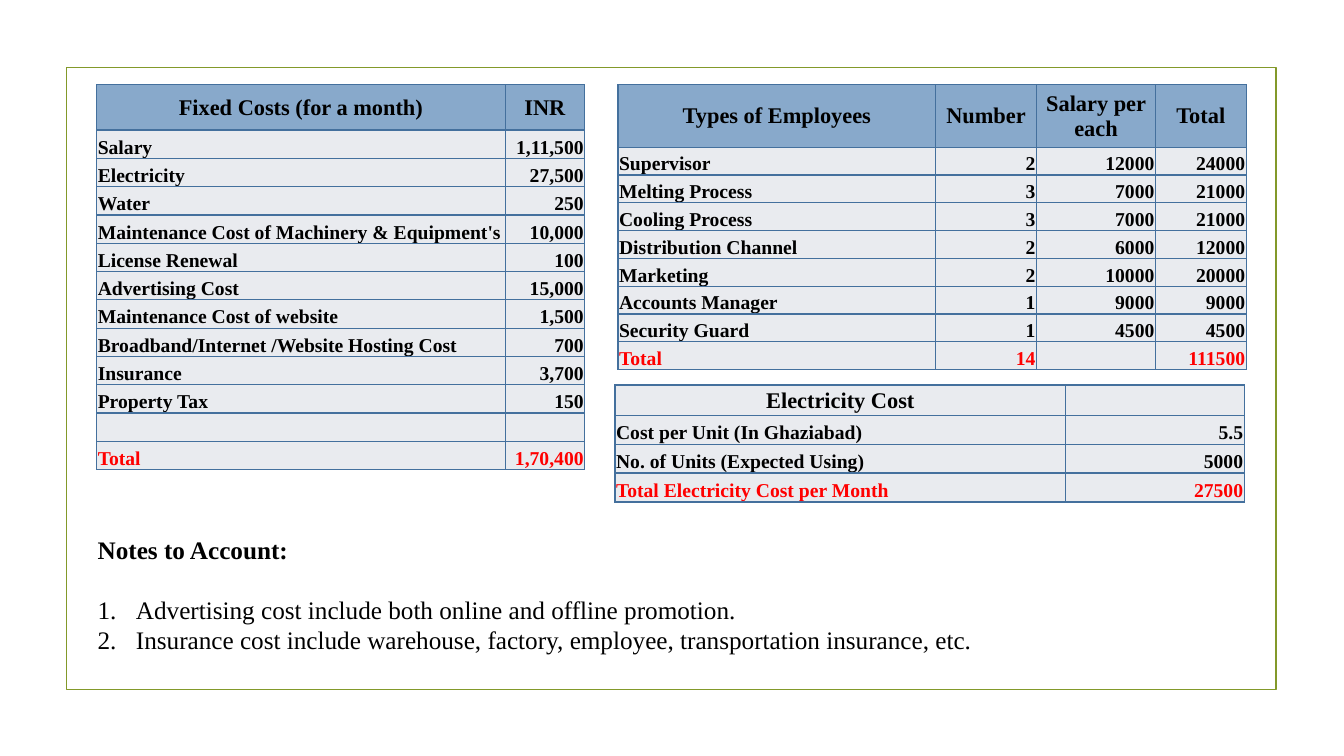
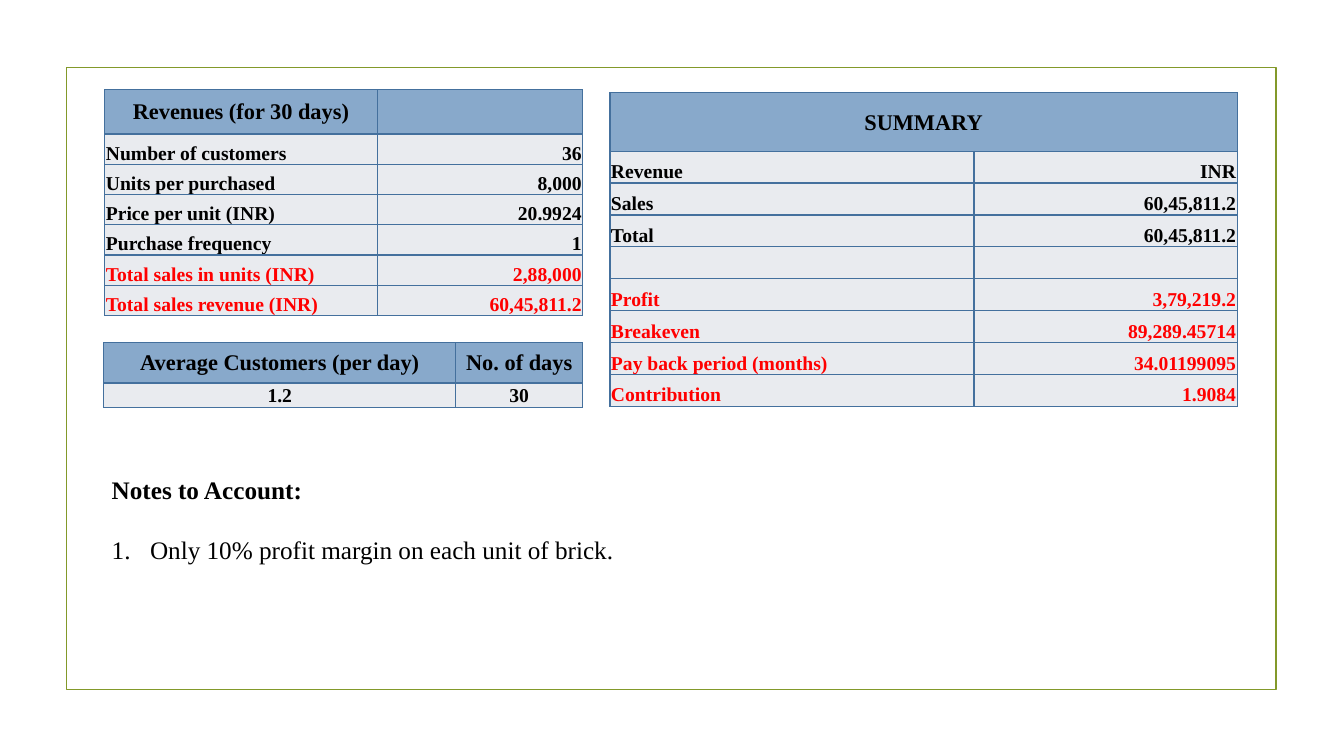
import pptx
import pptx.util
import pptx.dml.color
import pptx.enum.shapes
import pptx.enum.text
import pptx.oxml
import pptx.oxml.ns

Inches = pptx.util.Inches
Pt = pptx.util.Pt
ALIGN = pptx.enum.text.PP_ALIGN
ANCHOR = pptx.enum.text.MSO_ANCHOR

COLORS = {
    "frame": "83992A",
    "border": "44709D",
    "header": "88A9CB",
    "body": "E9EBEF",
    "text": "000000",
    "total": "FF0000",
}


def rgb(name):
    return pptx.dml.color.RGBColor.from_string(COLORS[name])


class Deck:
    font = "Times New Roman"
    header_size, body_size, remark_size = 16, 14, 18

    def __init__(self):
        self.prs = pptx.Presentation()
        self.prs.slide_width = Inches(13.33)
        self.prs.slide_height = Inches(7.5)
        self.slide = None

    def new_slide(self):
        self.slide = self.prs.slides.add_slide(self.prs.slide_layouts[6])
        sp = self.slide.shapes.add_shape(
            pptx.enum.shapes.MSO_SHAPE.RECTANGLE,
            Inches(0.66), Inches(0.67), Inches(12), Inches(6.17))
        sp.shadow.inherit = False
        sp.fill.background()
        sp.line.color.rgb = rgb("frame")
        sp.line.width = Pt(1.25)

    def style(self, p, size, bold=True, color="text"):
        p.font.name = self.font
        p.font.size = Pt(size)
        p.font.bold = bold
        p.font.color.rgb = rgb(color)

    def borders(self, cell):
        tc_pr = cell._tc.get_or_add_tcPr()
        for side in "LRTB":
            tc_pr.append(pptx.oxml.parse_xml(
                f'<a:ln{side} {pptx.oxml.ns.nsdecls("a")} w="12700"><a:solidFill>'
                f'<a:srgbClr val="{COLORS["border"]}"/></a:solidFill></a:ln{side}>'))

    def cell(self, cell, text, size, align, anchor, fill, color):
        self.borders(cell)
        cell.fill.solid()
        cell.fill.fore_color.rgb = rgb(fill)
        cell.margin_left = cell.margin_right = cell.margin_top = Inches(0.01)
        cell.margin_bottom = 0
        cell.vertical_anchor = anchor
        p = cell.text_frame.paragraphs[0]
        p.text = text
        p.alignment = align
        self.style(p, size, color=color)

    def table(self, left, top, height, header_height, widths, rows,
              totals=0, header_fill="header", centred=False):
        row_height = (height - header_height) / (len(rows) - 1)
        tbl = self.slide.shapes.add_table(
            len(rows), len(widths), Inches(left), Inches(top),
            Inches(sum(widths)), Inches(height)).table
        tbl.horz_banding = False
        for col, width in zip(tbl.columns, widths):
            col.width = Inches(width)
        for i, row in enumerate(rows):
            tbl.rows[i].height = Inches(row_height if i else header_height)
            color = "total" if i >= len(rows) - totals else "text"
            for j, text in enumerate(row):
                if i == 0:
                    look = (self.header_size, ALIGN.CENTER, ANCHOR.MIDDLE, header_fill)
                elif centred:
                    look = (self.body_size, ALIGN.CENTER, ANCHOR.MIDDLE, "body")
                else:
                    align = ALIGN.RIGHT if j else ALIGN.LEFT
                    look = (self.body_size, align, ANCHOR.BOTTOM, "body")
                self.cell(tbl.cell(i, j), text, *look, color)
        return tbl

    def remarks(self, left, top, width, height, items):
        tf = self.slide.shapes.add_textbox(
            Inches(left), Inches(top), Inches(width), Inches(height)).text_frame
        tf.word_wrap = True
        p = tf.paragraphs[0]
        p.text = "Notes to Account:"
        p.space_after = Pt(21)
        self.style(p, self.remark_size)
        for item in items:
            p = tf.add_paragraph()
            p.text = item
            p_pr = p._p.get_or_add_pPr()
            p_pr.set("marL", str(Inches(0.38)))
            p_pr.set("indent", str(-Inches(0.38)))
            p_pr.append(pptx.oxml.parse_xml(
                f'<a:buAutoNum {pptx.oxml.ns.nsdecls("a")} type="arabicPeriod"/>'))
            self.style(p, self.remark_size, bold=False)


def costs(deck):
    deck.new_slide()
    deck.table(0.96, 0.84, 3.82, 0.45, [4.05, 0.79], [
        ("Fixed Costs (for a month)", "INR"),
        ("Salary", "1,11,500"),
        ("Electricity", "27,500"),
        ("Water", "250"),
        ("Maintenance Cost of Machinery & Equipment's", "10,000"),
        ("License Renewal", "100"),
        ("Advertising Cost", "15,000"),
        ("Maintenance Cost of website", "1,500"),
        ("Broadband/Internet /Website Hosting Cost", "700"),
        ("Insurance", "3,700"),
        ("Property Tax", "150"),
        ("", ""),
        ("Total", "1,70,400"),
    ], totals=1)
    deck.table(6.13, 0.84, 2.83, 0.62, [3.15, 1, 1.18, 0.9], [
        ("Types of Employees", "Number", "Salary per each", "Total"),
        ("Supervisor", "2", "12000", "24000"),
        ("Melting Process", "3", "7000", "21000"),
        ("Cooling Process", "3", "7000", "21000"),
        ("Distribution Channel", "2", "6000", "12000"),
        ("Marketing", "2", "10000", "20000"),
        ("Accounts Manager", "1", "9000", "9000"),
        ("Security Guard", "1", "4500", "4500"),
        ("Total", "14", "", "111500"),
    ], totals=1)
    deck.table(6.1, 3.82, 1.16, 0.3, [4.47, 1.77], [
        ("Electricity Cost", ""),
        ("Cost per Unit (In Ghaziabad)", "5.5"),
        ("No. of Units (Expected Using)", "5000"),
        ("Total Electricity Cost per Month", "27500"),
    ], totals=1, header_fill="body")
    deck.remarks(0.87, 5.25, 11.27, 1.31, [
        "Advertising cost include both online and offline promotion.",
        "Insurance cost include warehouse, factory, employee, "
        "transportation insurance, etc.",
    ])


def revenues(deck):
    deck.new_slide()
    deck.table(1.04, 0.89, 2.24, 0.44, [2.7, 2.04], [
        ("Revenues (for 30 days)", ""),
        ("Number of customers", "36"),
        ("Units per purchased", "8,000"),
        ("Price per unit (INR)", "20.9924"),
        ("Purchase frequency", "1"),
        ("Total sales in units (INR)", "2,88,000"),
        ("Total sales revenue (INR)", "60,45,811.2"),
    ], totals=2)
    deck.table(1.03, 3.4, 0.62, 0.4, [3.49, 1.26], [
        ("Average Customers (per day)", "No. of days"),
        ("1.2", "30"),
    ], centred=True)
    summary = deck.table(6.05, 0.92, 3.11, 0.58, [3.61, 2.61], [
        ("SUMMARY", ""),
        ("Revenue", "INR"),
        ("Sales", "60,45,811.2"),
        ("Total", "60,45,811.2"),
        ("", ""),
        ("Profit", "3,79,219.2"),
        ("Breakeven", "89,289.45714"),
        ("Pay back period (months)", "34.01199095"),
        ("Contribution", "1.9084"),
    ], totals=4)
    summary.cell(0, 0).merge(summary.cell(0, 1))
    deck.remarks(1.01, 4.66, 11.23, 1.01, [
        "Only 10% profit margin on each unit of brick.",
    ])


def main():
    deck = Deck()
    costs(deck)
    revenues(deck)
    deck.prs.save("out.pptx")


if __name__ == "__main__":
    main()
